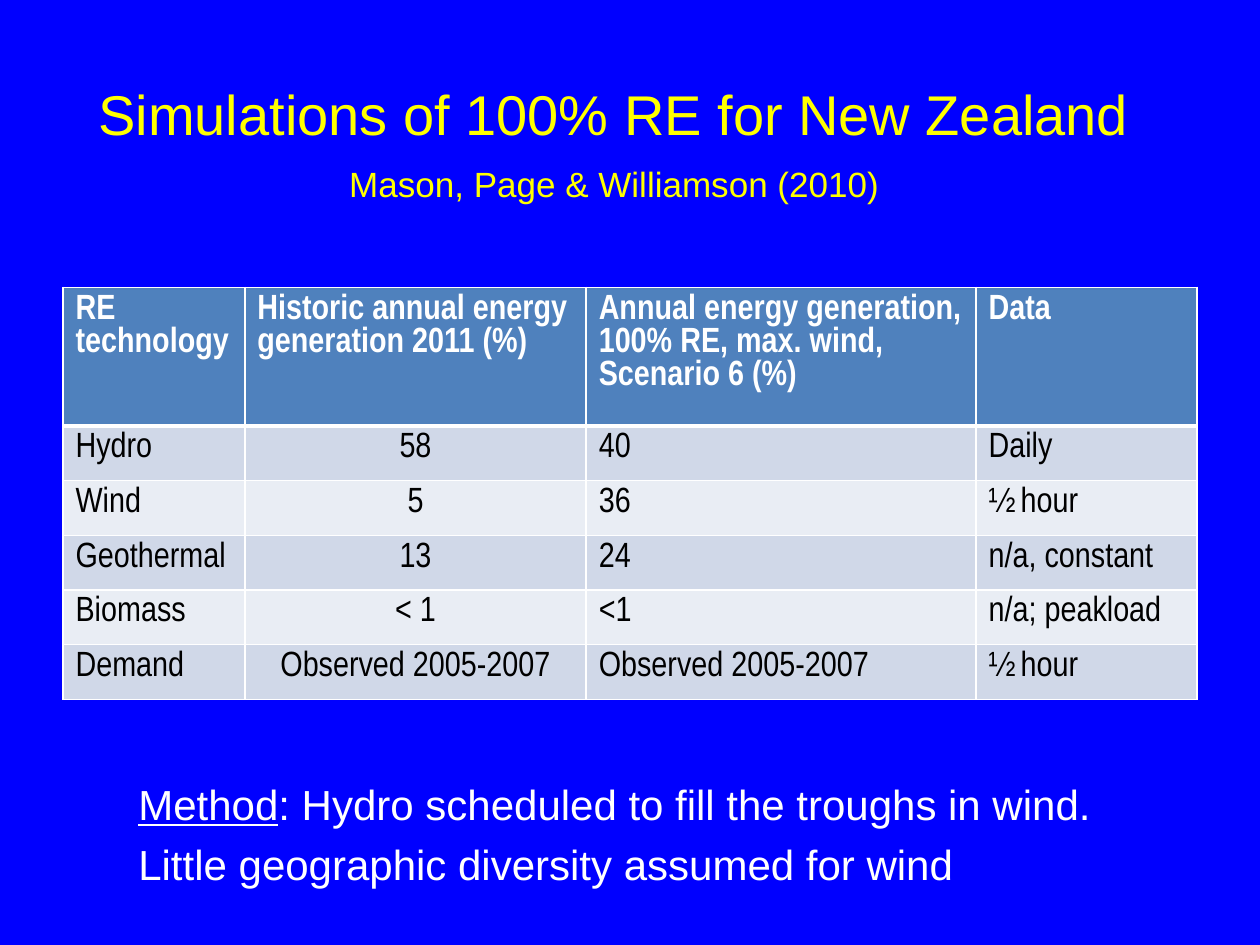
"""Build the slide on simulations of fully renewable energy for New Zealand."""
from lxml.etree import SubElement
from pptx import Presentation
from pptx.dml.color import RGBColor
from pptx.enum.text import MSO_ANCHOR, PP_ALIGN
from pptx.oxml.ns import qn
from pptx.util import Pt


def paint(fill, tint):
    fill.solid()
    fill.fore_color.rgb = RGBColor.from_string(tint)


def write(para, text, tint, form):
    run = para.add_run()
    run.text = text
    for name, value in form.items():
        setattr(run.font, name, value)
    paint(run.font.fill, tint)


deck = Presentation()
deck.slide_width, deck.slide_height = Pt(720), Pt(540)
slide = deck.slides.add_slide(deck.slide_layouts[6])
paint(slide.background.fill, "0000FF")

blocks = [
    ((18, 21.6, 666, 119.5), MSO_ANCHOR.MIDDLE, PP_ALIGN.CENTER, "FFFF00", [
        (0, 32, [("Simulations of 100% RE for New Zealand", False)]),
        (9.2, 20, [("Mason, Page & Williamson (2010)", False)]),
    ]),
    ((72, 441.4, 612, 75.6), MSO_ANCHOR.TOP, PP_ALIGN.LEFT, "FFFFFF", [
        (0, 24, [("Method", True),
                 (": Hydro scheduled to fill the troughs in wind.", False)]),
        (5.5, 24, [("Little geographic diversity assumed for wind", False)]),
    ]),
]
for box, anchor, align, tint, lines in blocks:
    frame = slide.shapes.add_textbox(*map(Pt, box)).text_frame
    frame.word_wrap = True
    frame.vertical_anchor = anchor
    for row, (gap, size, runs) in enumerate(lines):
        para = frame.add_paragraph() if row else frame.paragraphs[0]
        para.alignment = align
        para.space_before = Pt(gap)
        for text, under in runs:
            form = {"name": "Arial", "size": Pt(size), "underline": under}
            write(para, text, tint, form)

data = [
    ["RE technology", "Historic annual energy generation 2011 (%)",
     "Annual energy generation, 100% RE, max. wind, Scenario 6 (%)", "Data"],
    ["Hydro", "58", "40", "Daily"],
    ["Wind", "5", "36", "½ hour"],
    ["Geothermal", "13", "24", "n/a, constant"],
    ["Biomass", "< 1", "<1", "n/a; peakload"],
    ["Demand", "Observed 2005-2007", "Observed 2005-2007", "½ hour"],
]
widths = [103.9, 195.1, 222.8, 126.2]
heights = [64.5] + [29.15] * 5
area = map(Pt, (36, 164.2, sum(widths), sum(heights)))
table = slide.shapes.add_table(len(data), len(widths), *area).table
for col, width in zip(table.columns, widths):
    col.width = Pt(width)

for r, texts in enumerate(data):
    table.rows[r].height = Pt(heights[r])
    for c, text in enumerate(texts):
        cell = table.cell(r, c)
        para = cell.text_frame.paragraphs[0]
        para.alignment = PP_ALIGN.CENTER if r and c == 1 else PP_ALIGN.LEFT
        form = {"name": "Arial Narrow", "size": Pt(20), "bold": r == 0}
        write(para, text, "000000" if r else "FFFFFF", form)
        props = cell._tc.get_or_add_tcPr()
        for side in "LRTB":
            thick = (side, r) in (("B", 0), ("T", 1))
            edge = SubElement(props, qn("a:ln" + side), w=str(Pt(3 if thick else 1)))
            solid = SubElement(edge, qn("a:solidFill"))
            SubElement(solid, qn("a:srgbClr"), val="FFFFFF")
        paint(cell.fill, ("D0D8E8" if r % 2 else "E9EDF4") if r else "4F81BD")

deck.save("out.pptx")
